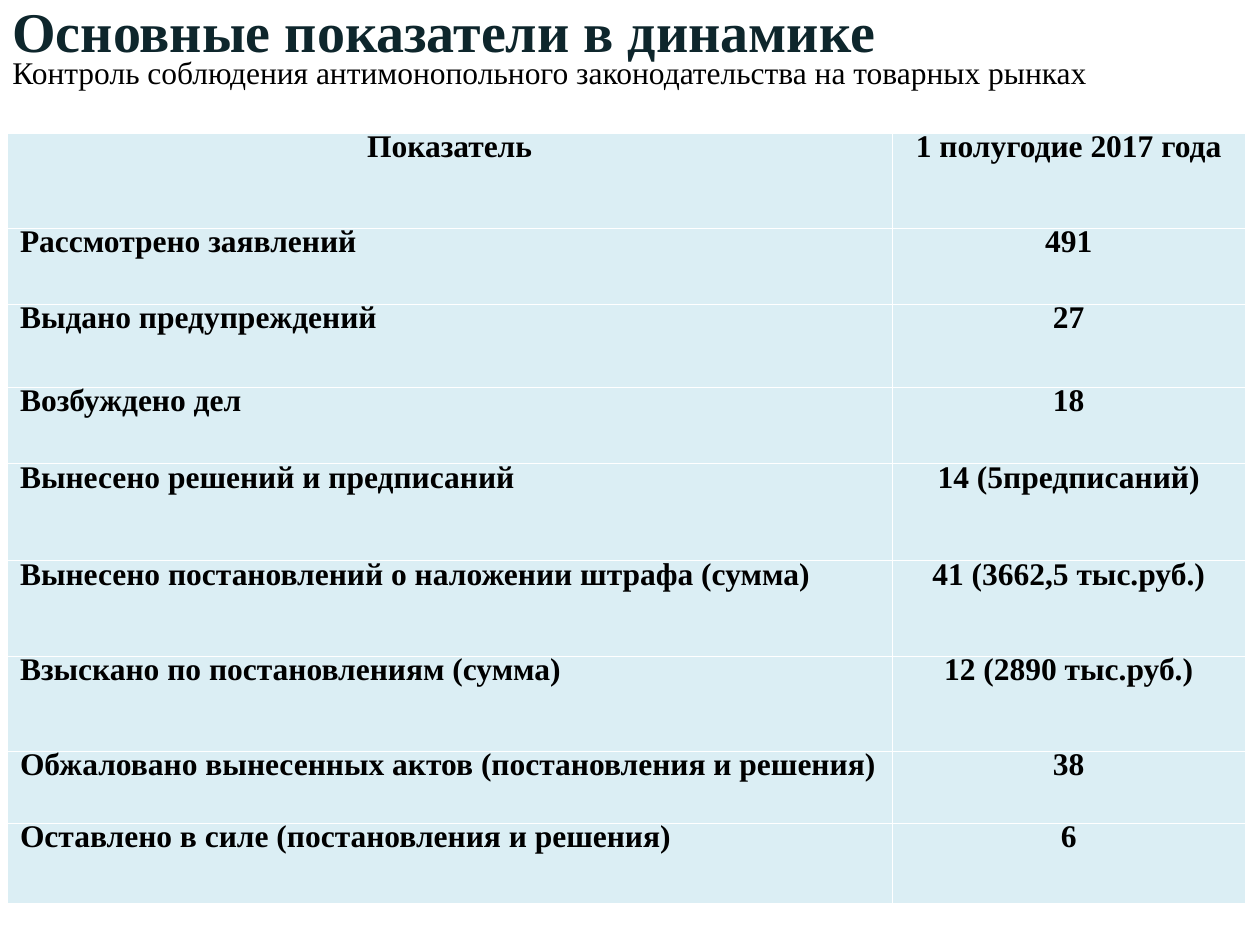
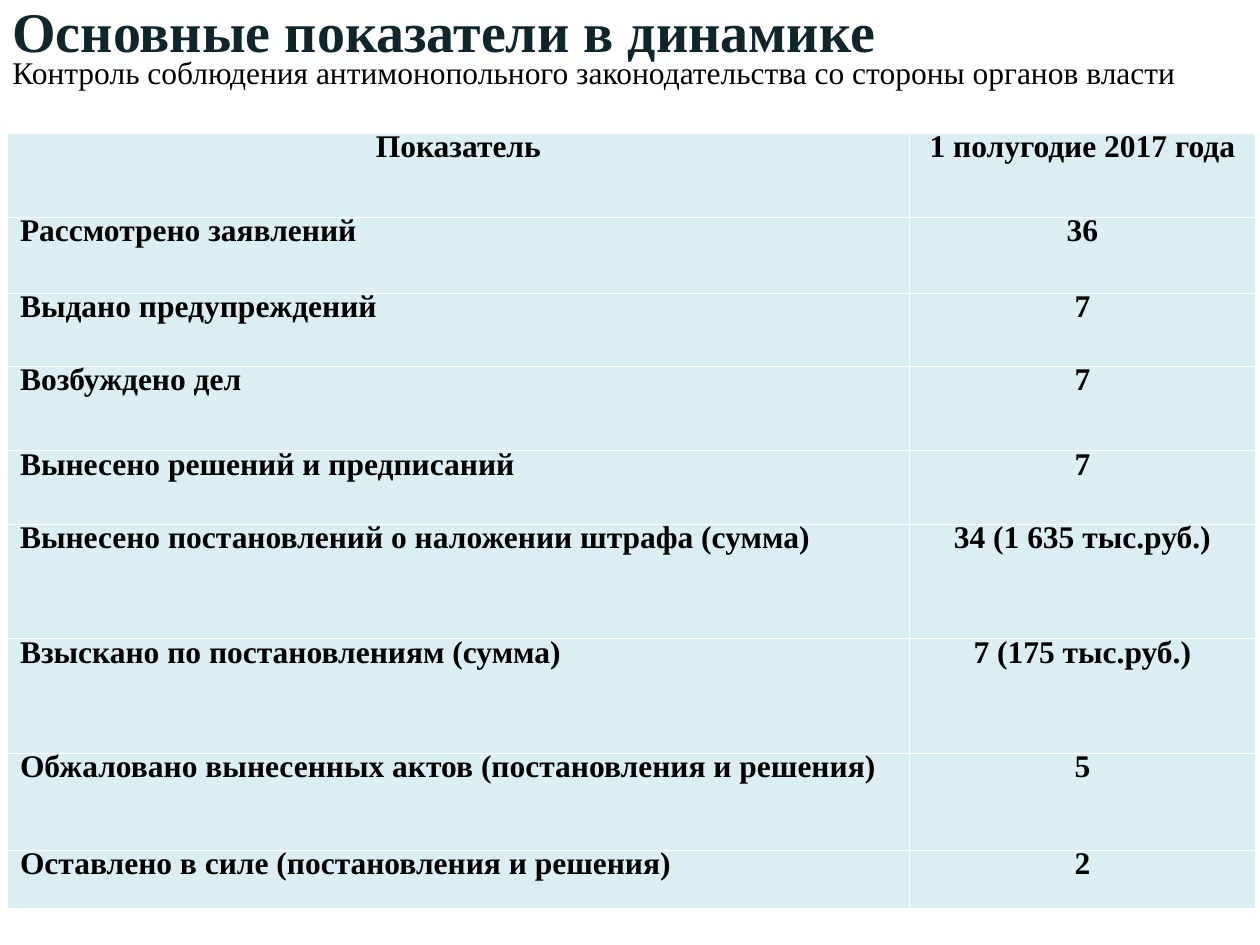
from pptx import Presentation
from pptx.dml.color import RGBColor as Rgb
from pptx.enum.text import MSO_ANCHOR as Anchor, PP_ALIGN as Align
from pptx.oxml import parse_xml
from pptx.oxml.ns import nsdecls
from pptx.util import Cm, Pt

FONT = "Times New Roman"
INK, BLACK, PALE, WHITE = "0E262C", "000000", "DBEEF4", "FFFFFF"
TITLE = "Основные показатели в динамике"
HEADS = ("Показатель", "1 полугодие 2017 года")
NAMES = (
    "Рассмотрено заявлений",
    "Выдано предупреждений",
    "Возбуждено дел",
    "Вынесено решений и предписаний",
    "Вынесено постановлений о наложении штрафа (сумма)",
    "Взыскано по постановлениям (сумма)",
    "Обжаловано вынесенных актов (постановления и решения)",
    "Оставлено в силе (постановления и решения)",
)
PAGES = (
    {
        "topic": "Контроль соблюдения антимонопольного законодательства на товарных рынках",
        "counts": ("491", "27", "18", "14 (5предписаний)", "41 (3662,5 тыс.руб.)",
                   "12 (2890 тыс.руб.)", "38", "6"),
        "widths": (17.83, 7.13),
        "heights": (1.92, 1.52, 1.68, 1.54, 1.96, 1.92, 1.92, 1.45, 1.61),
    },
    {
        "topic": "Контроль соблюдения антимонопольного законодательства со стороны органов власти",
        "counts": ("36", "7", "7", "7", "34 (1 635 тыс.руб.)", "7 (175 тыс.руб.)", "5", "2"),
        "widths": (18.18, 6.98),
        "heights": (1.7, 1.53, 1.47, 1.7, 1.48, 2.31, 2.31, 1.95, 1.17),
    },
)


def tint(code):
    return Rgb.from_string(code)


def style(para, text, size, color, bold, space, align=Align.LEFT):
    para.text = text
    para.alignment = align
    para.line_spacing = space
    font = para.font
    font.name, font.size, font.bold = FONT, Pt(size), bold
    font.color.rgb = tint(color)


def edge(cell):
    props = cell._tc.get_or_add_tcPr()
    for place, side in enumerate(("lnL", "lnR", "lnT", "lnB")):
        props.insert(place, parse_xml(
            f'<a:{side} {nsdecls("a")} w="{Pt(0.06)}"><a:solidFill>'
            f'<a:srgbClr val="{WHITE}"/></a:solidFill></a:{side}>'))


def add_title(slide, topic):
    left, top, right, base = 0, Cm(0.1), Cm(25.4), Cm(1.78)
    path = slide.shapes.build_freeform(left, top)
    path.add_line_segments([(right, top), (right, base), (left, base)])
    band = path.convert_to_shape()
    band.shadow.inherit = False
    band.fill.background()
    band.line.fill.background()
    frame = band.text_frame
    frame.word_wrap = True
    frame.vertical_anchor = Anchor.MIDDLE
    style(frame.paragraphs[0], TITLE, 32, INK, True, 0.9)
    style(frame.add_paragraph(), topic, 18, BLACK, False, 0.66)


def add_grid(slide, page):
    widths, heights = page["widths"], page["heights"]
    rows = [HEADS, *zip(NAMES, page["counts"])]
    table = slide.shapes.add_table(
        len(rows), len(HEADS), Cm(0.15), Cm(2.68),
        Cm(sum(widths)), Cm(sum(heights))).table
    table.horz_banding = False
    for col, width in zip(table.columns, widths):
        col.width = Cm(width)
    for r, (row, height) in enumerate(zip(rows, heights)):
        table.rows[r].height = Cm(height)
        for c, text in enumerate(row):
            cell = table.cell(r, c)
            cell.fill.solid()
            cell.fill.fore_color.rgb = tint(PALE)
            edge(cell)
            align = Align.LEFT if r and not c else Align.CENTER
            style(cell.text_frame.paragraphs[0], text, 18, BLACK, True, 0.66, align)


def main():
    deck = Presentation()
    deck.slide_width, deck.slide_height = Cm(25.4), Cm(19.05)
    for page in PAGES:
        slide = deck.slides.add_slide(deck.slide_layouts[6])
        add_title(slide, page["topic"])
        add_grid(slide, page)
    deck.save("out.pptx")


if __name__ == "__main__":
    main()
